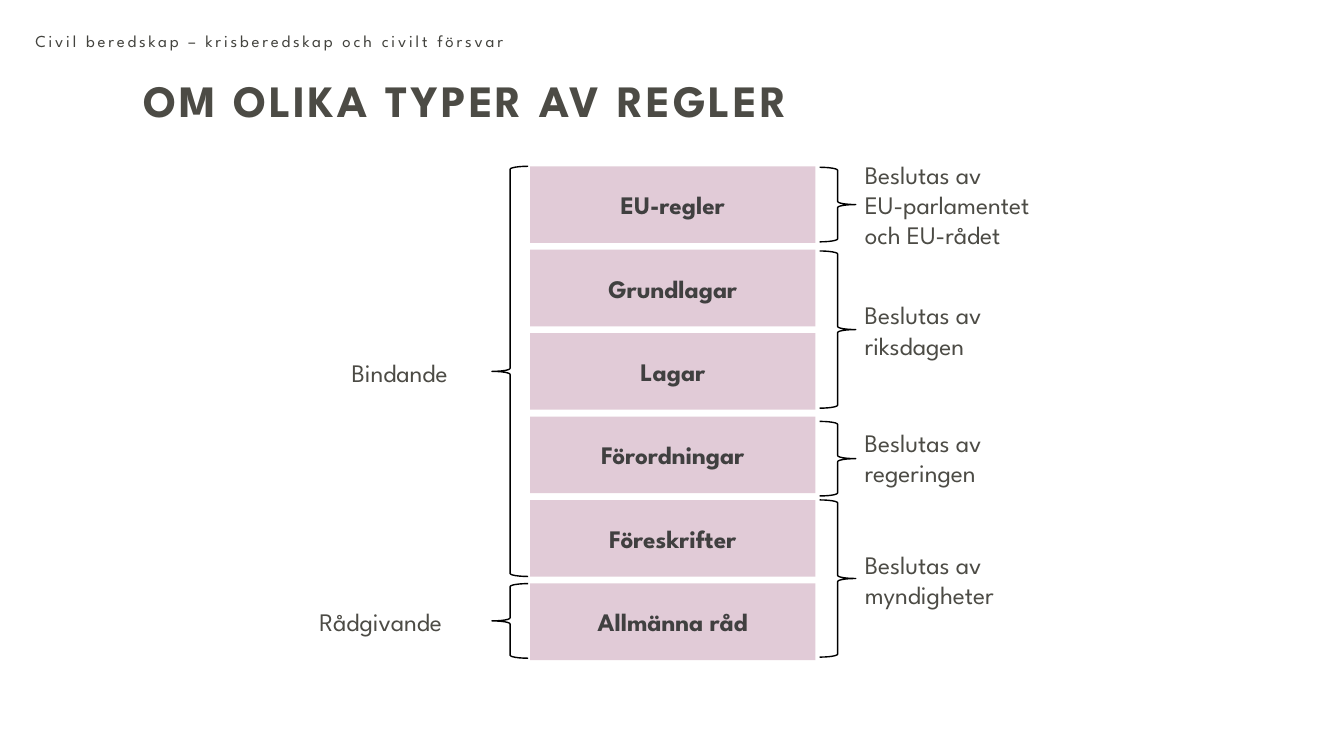
"""Build a slide on the kinds of rules, who decides them and how far they bind."""
import pptx
import pptx.util
import pptx.dml.color
import pptx.enum.shapes
import pptx.enum.text

Pt = pptx.util.Pt
RGB = pptx.dml.color.RGBColor
SHAPE = pptx.enum.shapes.MSO_SHAPE
ALIGN = pptx.enum.text.PP_ALIGN
ANCHOR = pptx.enum.text.MSO_ANCHOR
SIZE = pptx.enum.text.MSO_AUTO_SIZE

PINK = RGB(0xE1, 0xCB, 0xD7)
BLACK = RGB(0x00, 0x00, 0x00)
DARK = RGB(0x40, 0x40, 0x40)
OLIVE = RGB(0x4C, 0x4B, 0x45)
MOSS = RGB(0x43, 0x43, 0x3E)


def write(shape, text, size, color, bold=False, align=ALIGN.LEFT, fit=SIZE.NONE):
    frame = shape.text_frame
    frame.text = text
    look = {"word_wrap": True, "auto_size": fit, "vertical_anchor": ANCHOR.MIDDLE}
    for key, value in look.items():
        setattr(frame, key, value)
    para = frame.paragraphs[0]
    para.alignment = align
    para.space_before = Pt(0)
    for run in para.runs:
        look = {"name": "League Spartan", "size": Pt(size), "bold": bold}
        for key, value in look.items():
            setattr(run.font, key, value)
        run.font.color.rgb = color
    return para


def draw(kind, left, top, width, height):
    shape = slide.shapes.add_shape(kind, Pt(left), Pt(top), Pt(width), Pt(height))
    shape.shadow.inherit = False
    return shape


deck = pptx.Presentation()
deck.slide_width, deck.slide_height = Pt(960), Pt(540)
slide = deck.slides.add_slide(deck.slide_layouts[2])

heads = [
    (slide.placeholders[1], "Civil beredskap – krisberedskap och civilt försvar",
     12, MOSS, False, (18, 18, 462, 21.6)),
    (slide.shapes.title, "OM OLIKA TYPER AV REGLER",
     32, OLIVE, True, (95, 53.3, 766, 40.3)),
]
for holder, text, size, color, bold, box in heads:
    for key, value in zip(("left", "top", "width", "height"), box):
        setattr(holder, key, Pt(value))
    para = write(holder, text, size, color, bold)
    for run in para.runs:
        props = run.font._element
        props.set("spc", "200")
        props.set("cap", "none")
slide.shapes.title.text_frame.paragraphs[0].line_spacing = 0.9

rules = ["EU-regler", "Grundlagar", "Lagar", "Förordningar", "Föreskrifter", "Allmänna råd"]
for row, rule in enumerate(rules):
    bar = draw(SHAPE.RECTANGLE, 378.7, 118.8 + 59.6 * row, 203.8, 54.7)
    bar.fill.solid()
    bar.fill.fore_color.rgb = PINK
    bar.line.fill.background()
    write(bar, rule, 18, DARK, True, ALIGN.CENTER)

LEFT, RIGHT = (SHAPE.LEFT_BRACE, 351.4), (SHAPE.RIGHT_BRACE, 585.4)
groups = [
    (LEFT, 118.8, 293, "Bindande", 244.1, 251.3, 107.3, 29),
    (LEFT, 416.9, 53.3, "Rådgivande", 221, 429.1, 128.9, 29),
    (RIGHT, 119.5, 53.3, "Beslutas av\vEU-parlamentet och EU-rådet", 610.6, 109.4, 151.9, 73),
    (RIGHT, 179.3, 112.3, "Beslutas av riksdagen", 610.6, 210.2, 112.3, 51),
    (RIGHT, 301, 53.3, "Beslutas av regeringen", 610.6, 301, 112.3, 51),
    (RIGHT, 357.1, 112.3, "Beslutas av myndigheter", 610.6, 388.1, 130.3, 51),
]
for (kind, left), top, height, text, *box in groups:
    brace = draw(kind, left, top, 25.9, height)
    brace.fill.background()
    brace.line.color.rgb = BLACK
    brace.line.width = Pt(1)
    label = slide.shapes.add_textbox(*map(Pt, box))
    write(label, text, 18, OLIVE, fit=SIZE.SHAPE_TO_FIT_TEXT)

deck.save("out.pptx")
